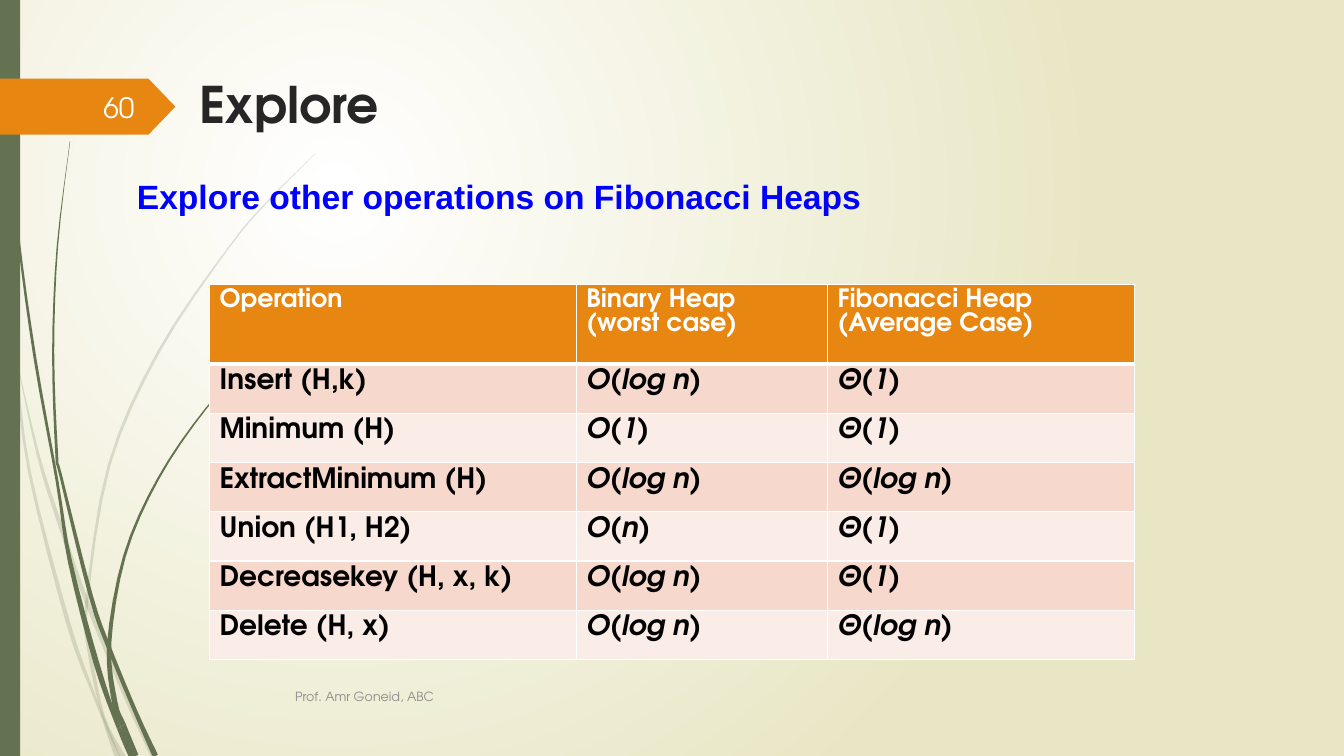
from lxml import etree
from pptx import Presentation
from pptx.dml.color import RGBColor
from pptx.enum import shapes, text
from pptx.oxml.ns import qn
from pptx.util import Pt

FONT = "TeX Gyre Adventor"
GREEN, ORANGE, WHITE = "647252", "E78712", "FFFFFF"
BANDS = ["F6D9CC", "FAEDE7"]

TITLE = "Explore"
LEAD = "Explore other operations on Fibonacci Heaps"
FOOT = "Prof. Amr Goneid, ABC"
PAGE = "60"
ROWS = [
    ("Operation", "Binary Heap\n(worst case)", "Fibonacci Heap\n(Average Case)"),
    ("Insert (H,k)", "O(log n)", "Θ(1)"),
    ("Minimum (H)", "O(1)", "Θ(1)"),
    ("ExtractMinimum (H)", "O(log n)", "Θ(log n)"),
    ("Union (H1, H2)", "O(n)", "Θ(1)"),
    ("Decreasekey (H, x, k)", "O(log n)", "Θ(1)"),
    ("Delete (H, x)", "O(log n)", "Θ(log n)"),
]
COLS = [262, 179.5, 219.5]
HEAD, ROW = 57, 35.2

# Grass blades: x, y and thickness along the spine, then the joints by index
PALE = [
    ([(0, 209, 6), (7, 248, 3), (11, 260, 2), (21, 337, 2), (49, 446, 3),
      (67, 496, 2), (74, 514, 2), (84, 541, 4)], (2, 6)),
    ([(10, 248, 0), (27, 324, 2), (43, 375, 3), (62, 430, 3), (90, 498, 3),
      (110, 541, 4)], (3,)),
    ([(225, 110, 0), (193, 142, 1), (164, 176, 1), (114, 250, 2),
      (78, 332, 2), (62, 430, 2), (64, 465, 3), (74, 512, 2),
      (88, 541, 4)], (5, 7)),
]
DARK = [
    ([(2.5, 0, 1), (5.4, 79, 1), (13, 168, 1.5), (25, 256, 2), (41, 345, 2),
      (50, 401, 3), (69, 474, 4), (85, 520, 3), (95, 540, 6)], (4, 7)),
    ([(50, 101, 0), (41, 176, 1), (38, 251, 1.5), (40.5, 324, 2),
      (43.5, 340, 2), (65, 426, 3), (78, 463, 3), (97, 509, 3),
      (111, 540, 4)], (4, 6)),
    ([(187, 248, 0), (147, 292, 1), (113, 342, 1.5), (89, 397, 2),
      (78, 460, 3), (82, 502, 4), (88, 518, 4), (97, 540, 4)], (4, 6)),
]
STEPS = 4


def rgb(hexa):
    return RGBColor.from_string(hexa)


def paint(shape, color, alpha=None):
    shape.shadow.inherit = False
    shape.line.fill.background()
    shape.fill.solid()
    shape.fill.fore_color.rgb = rgb(color)
    if alpha:
        tone = shape.fill._xPr.find(qn("a:solidFill"))[0]
        etree.SubElement(tone, qn("a:alpha"), val=str(alpha * 1000))


def style(frame, size, color, bold=False, italic=False, font=FONT):
    for para in frame.paragraphs:
        for run in para.runs:
            face = run.font
            face.size, face.name = Pt(size), font
            face.bold, face.italic = bold, italic
            face.color.rgb = rgb(color)


def box(words, place, anchor=text.MSO_ANCHOR.TOP):
    frame = slide.shapes.add_textbox(*map(Pt, place)).text_frame
    frame.word_wrap = True
    frame.vertical_anchor = anchor
    frame.text = words
    return frame


def smooth(spine):
    """Catmull-Rom points along the spine."""
    ends = [spine[0], *spine, spine[-1]]
    for a, b, c, d in zip(ends, ends[1:], ends[2:], ends[3:]):
        for n in range(STEPS):
            t = n / STEPS
            yield [q + t / 2 * (r - p + t * (2 * p - 5 * q + 4 * r - s
                                             + t * (3 * (q - r) + s - p)))
                   for p, q, r, s in zip(a, b, c, d)]
    yield spine[-1]


def blade(spine, joints, alpha):
    dots = list(smooth(spine))
    left, right = [], []
    for i, (x, y, wide) in enumerate(dots):
        before, after = dots[max(i - 1, 0)], dots[min(i + 1, len(dots) - 1)]
        dx, dy = after[0] - before[0], after[1] - before[1]
        half = max(wide, 0.3) / 2 / (dx * dx + dy * dy) ** 0.5
        left.append((x - dy * half, y + dx * half))
        right.append((x + dy * half, y - dx * half))
    cuts = [0, *joints, len(spine) - 1]
    for start, end in zip(cuts, cuts[1:]):
        part = slice(start * STEPS, end * STEPS + 1)
        edge = [(x * 100, y * 100) for x, y in left[part] + right[part][::-1]]
        form = slide.shapes.build_freeform(*edge[0], scale=Pt(1) / 100)
        form.add_line_segments(edge[1:], close=True)
        paint(form.convert_to_shape(), GREEN, alpha)


def border(cell, sides):
    props = cell._tc.get_or_add_tcPr()
    for side, width in sides.items():
        line = etree.SubElement(props, qn("a:ln" + side), w=str(Pt(width)))
        fill = etree.SubElement(line, qn("a:solidFill"))
        etree.SubElement(fill, qn("a:srgbClr"), val=WHITE)


deck = Presentation()
deck.slide_width, deck.slide_height = Pt(960), Pt(540)
slide = deck.slides.add_slide(deck.slide_layouts[5])

# Background: round gradient
back = slide.background.fill
back.gradient()
for stop, (spot, color) in zip(back.gradient_stops, [(0, WHITE), (1, "E8E6C4")]):
    stop.position, stop.color.rgb = spot, rgb(color)
grad = slide.background._cSld.find(".//" + qn("a:gradFill"))
grad.remove(grad.find(qn("a:lin")))
ring = etree.SubElement(grad, qn("a:path"), {"path": "circle"})
etree.SubElement(ring, qn("a:fillToRect"),
                 l="50000", t="50000", r="100000", b="100000")

# Grass, side bar and page flag
for blades, alpha in [(PALE, 20), (DARK, None)]:
    for spine, joints in blades:
        blade(spine, joints, alpha)
kinds = shapes.MSO_SHAPE
bar = slide.shapes.add_shape(kinds.RECTANGLE, 0, 0, Pt(14.4), Pt(540))
paint(bar, GREEN)
flag = slide.shapes.add_shape(kinds.PENTAGON, 0, Pt(56.2), Pt(125.3), Pt(40))
flag.adjustments[0] = 0.48
paint(flag, ORANGE)

# Title and text lines
title = slide.shapes.title
title.left, title.top, title.width, title.height = map(Pt, (135.4, 48.6, 612, 54.7))
title.text_frame.text = TITLE
title.text_frame.vertical_anchor = text.MSO_ANCHOR.TOP
title.text_frame.paragraphs[0].alignment = text.PP_ALIGN.LEFT
style(title.text_frame, 36, "262626", bold=True)

lead = box(LEAD, (90.7, 122.4, 830.9, 360.7))
style(lead, 24, "0000FF", bold=True, font="Arial")
foot = box(FOOT, (203.8, 483.1, 599.8, 28.8), text.MSO_ANCHOR.MIDDLE)
style(foot, 9, "8C8C8C")
page = box(PAGE, (41.8, 61.9, 61.2, 28.8), text.MSO_ANCHOR.MIDDLE)
page.paragraphs[0].alignment = text.PP_ALIGN.RIGHT
style(page, 20, "FEFFFF")

# Table of costs
high = HEAD + ROW * (len(ROWS) - 1)
grid = slide.shapes.add_table(len(ROWS), len(COLS), Pt(149.6), Pt(203),
                              Pt(sum(COLS)), Pt(high)).table
for col, wide in zip(grid.columns, COLS):
    col.width = Pt(wide)
for i, row in enumerate(ROWS):
    grid.rows[i].height = Pt(ROW if i else HEAD)
    for j, words in enumerate(row):
        cell = grid.cell(i, j)
        cell.text_frame.text = words
        border(cell, {"L": 1, "R": 1, "T": 3 if i == 1 else 1, "B": 1 if i else 3})
        cell.fill.solid()
        cell.fill.fore_color.rgb = rgb(BANDS[(i - 1) % 2] if i else ORANGE)
        style(cell.text_frame, 20 if i else 18, "000000" if i else WHITE,
              bold=True, italic=i > 0 and j > 0)

deck.save("out.pptx")
